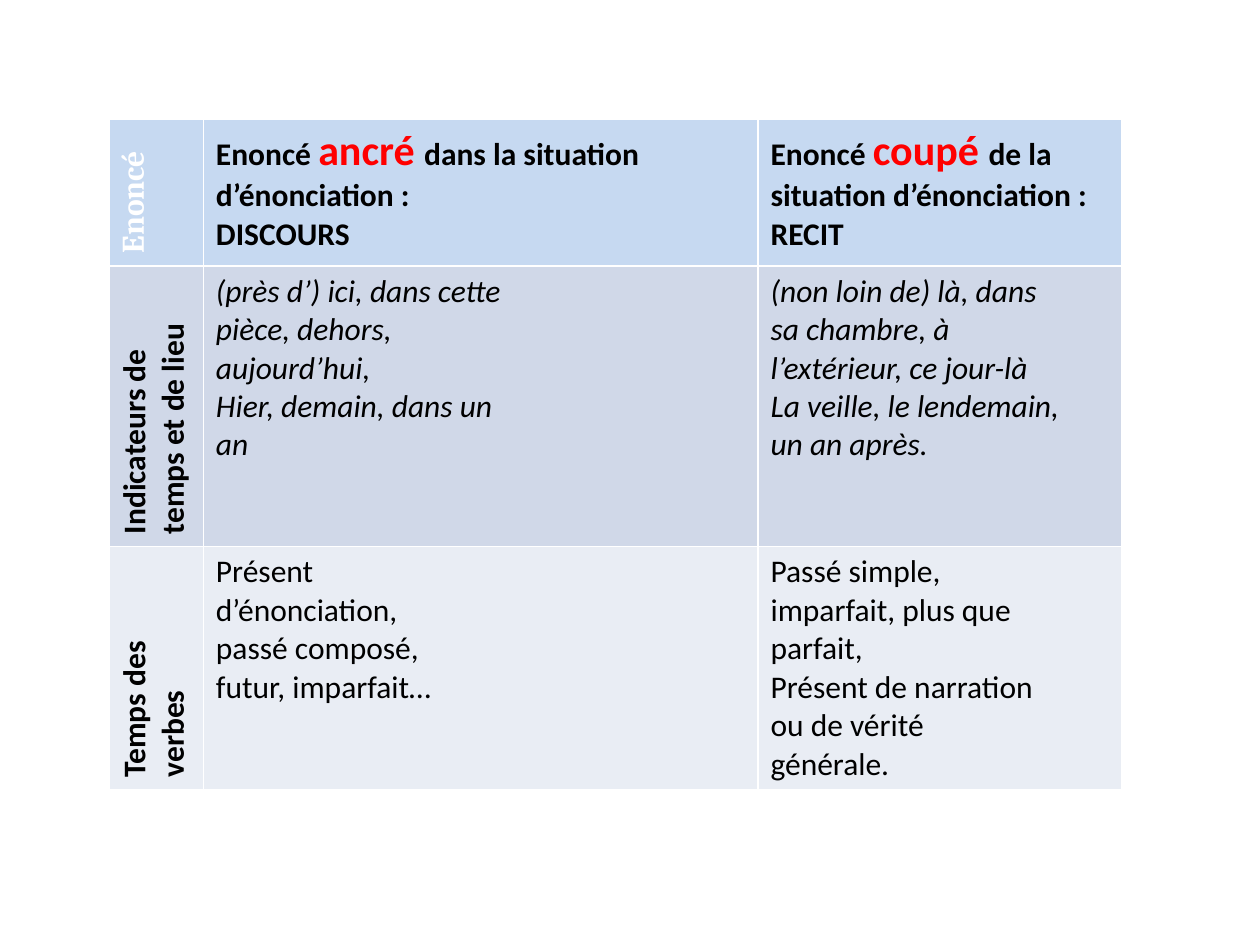
"""Build a slide with a table comparing anchored and detached utterances in French."""
from dataclasses import dataclass

from pptx import Presentation
from pptx.dml.color import RGBColor
from pptx.table import _Cell
from pptx.util import Cm, Pt

BLACK = RGBColor(0x00, 0x00, 0x00)
WHITE = RGBColor(0xFF, 0xFF, 0xFF)
RED = RGBColor(0xFF, 0x00, 0x00)
HEADER_BLUE = RGBColor(0xC6, 0xD9, 0xF1)
BAND_DARK = RGBColor(0xD0, 0xD8, 0xE8)
BAND_LIGHT = RGBColor(0xE9, 0xED, 0xF4)

LEFT, TOP = Cm(2.2), Cm(2.4)
COLUMN_WIDTHS = (Cm(1.9), Cm(11.18), Cm(7.34))
ROW_HEIGHTS = (Cm(2.96), Cm(5.66), Cm(4.9))
ROW_FILLS = (HEADER_BLUE, BAND_DARK, BAND_LIGHT)


@dataclass(frozen=True)
class Span:
    text: str
    size: int = 18
    color: RGBColor = BLACK
    font: str = "Calibri"
    bold: bool = False
    italic: bool = False


@dataclass(frozen=True)
class CellText:
    paragraphs: list[list[Span]]
    vertical: bool = False


def lines(*texts: str, bold: bool = False, italic: bool = False) -> list[list[Span]]:
    return [[Span(text, bold=bold, italic=italic)] for text in texts]


def heading(keyword: str, rest: str, *following: str) -> CellText:
    first = [
        Span("Enoncé ", bold=True),
        Span(keyword, size=24, color=RED, bold=True),
        Span(rest, bold=True),
    ]
    return CellText([first, *lines(*following, bold=True)])


def row_label(*texts: str) -> CellText:
    return CellText(lines(*texts, bold=True), vertical=True)


ROWS = (
    (
        CellText([[Span("Enoncé", color=WHITE, font="Cambria", bold=True)]], vertical=True),
        heading("ancré ", "dans la situation", "d’énonciation :", "DISCOURS"),
        heading("coupé ", "de la situation d’énonciation :", "RECIT"),
    ),
    (
        row_label("Indicateurs de", "temps et de lieu"),
        CellText(lines("(près d’) ici, dans cette", "pièce, dehors,", "aujourd’hui,",
                       "Hier, demain, dans un", "an", italic=True)),
        CellText(lines("(non loin de) là, dans", "sa chambre, à",
                       "l’extérieur, ce jour-là", "La veille, le lendemain,",
                       "un an après.", italic=True)),
    ),
    (
        row_label("Temps des", "verbes"),
        CellText(lines("Présent", "d’énonciation,", "passé composé,",
                       "futur, imparfait…")),
        CellText(lines("Passé simple,", "imparfait, plus que", "parfait,",
                       "Présent de narration", "ou de vérité", "générale.")),
    ),
)


def fill_cell(cell: _Cell, content: CellText, color: RGBColor) -> None:
    cell.fill.solid()
    cell.fill.fore_color.rgb = color
    if content.vertical:
        cell._tc.get_or_add_tcPr().set("vert", "vert270")
    for index, spans in enumerate(content.paragraphs):
        frame = cell.text_frame
        para = frame.add_paragraph() if index else frame.paragraphs[0]
        for span in spans:
            run = para.add_run()
            run.text = span.text
            run.font.color.rgb = span.color
            formats = {"name": span.font, "size": Pt(span.size),
                       "bold": span.bold, "italic": span.italic}
            for name, value in formats.items():
                setattr(run.font, name, value)


def main() -> None:
    deck = Presentation()
    deck.slide_width, deck.slide_height = Cm(25.4), Cm(19.05)
    page = deck.slides.add_slide(deck.slide_layouts[6])
    table = page.shapes.add_table(
        len(ROWS), len(COLUMN_WIDTHS), LEFT, TOP, sum(COLUMN_WIDTHS), sum(ROW_HEIGHTS)
    ).table
    for column, width in zip(table.columns, COLUMN_WIDTHS):
        column.width = width
    for row, height, color, contents in zip(table.rows, ROW_HEIGHTS, ROW_FILLS, ROWS):
        row.height = height
        for cell, content in zip(row.cells, contents):
            fill_cell(cell, content, color)
    deck.save("out.pptx")


if __name__ == "__main__":
    main()
